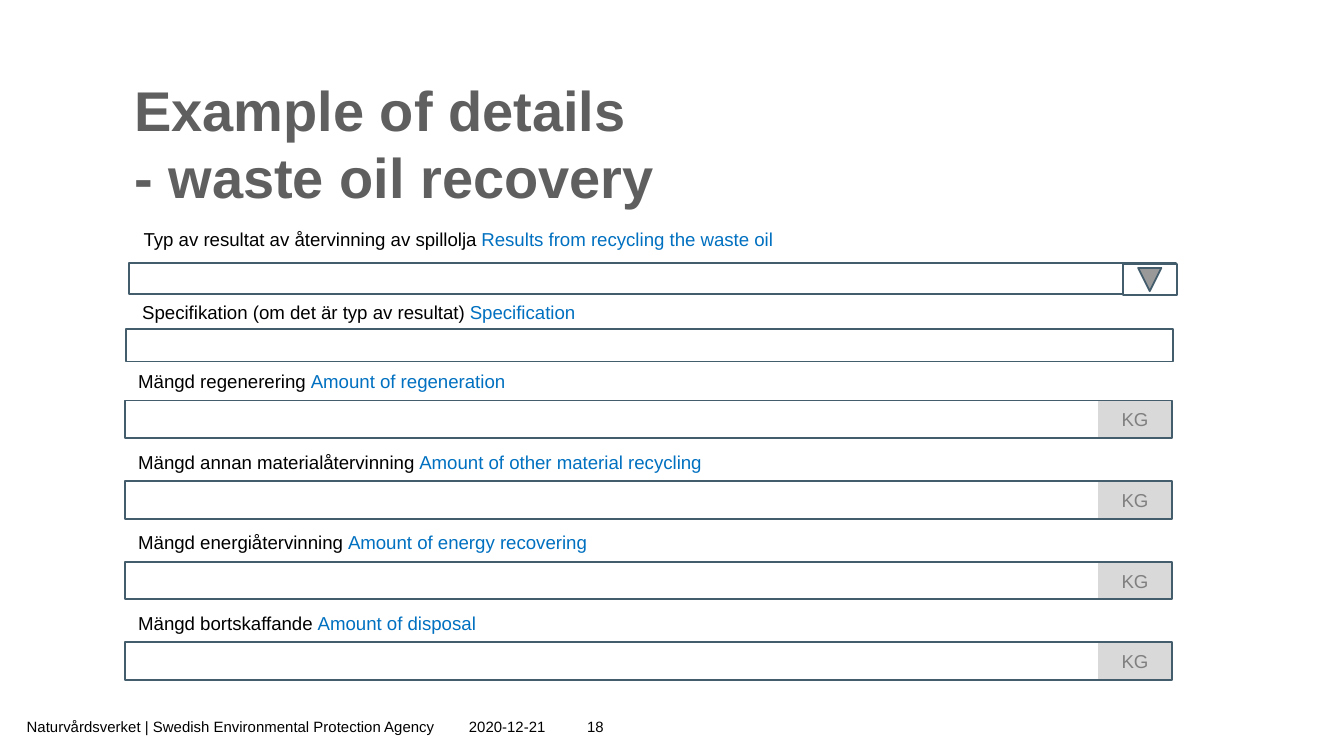
"""Builds a slide with an example form for reporting waste oil recovery."""
from copy import deepcopy

from pptx import Presentation
from pptx.dml.color import RGBColor
from pptx.enum.shapes import MSO_SHAPE
from pptx.enum.text import MSO_ANCHOR, MSO_AUTO_SIZE, PP_ALIGN
from pptx.oxml.ns import qn
from pptx.util import Inches, Pt

COLORS = {
    "text": "000000",
    "english": "0070C0",
    "title": "5F5F5F",
    "border": "435D6C",
    "field": "FFFFFF",
    "unit": "D9D9D9",
    "unit_text": "808080",
}


def write(s, text, english="", size=10, color="text", bold=False,
          align=PP_ALIGN.LEFT, anchor=MSO_ANCHOR.MIDDLE):
    tf = s.text_frame
    tf.word_wrap = True
    tf.auto_size = MSO_AUTO_SIZE.NONE
    tf.vertical_anchor = anchor
    p = tf.paragraphs[0]
    p.text = text
    p.alignment = align
    if english:
        p.add_run().text = english
    for r in p.runs:
        r.font.name = "Arial"
        r.font.size = Pt(size)
        r.font.bold = bold
        name = "english" if r.text == english else color
        r.font.color.rgb = RGBColor.from_string(COLORS[name])
    for br in p._p.findall(qn("a:br")):
        br.append(deepcopy(p.runs[0]._r.rPr))


def add_box(x, y, w, h, fill=None, border=False, kind=MSO_SHAPE.RECTANGLE):
    s = slide.shapes.add_shape(kind, Inches(x), Inches(y), Inches(w), Inches(h))
    s.shadow.inherit = False
    if fill:
        s.fill.solid()
        s.fill.fore_color.rgb = RGBColor.from_string(COLORS[fill])
    else:
        s.fill.background()
    if border:
        s.line.color.rgb = RGBColor.from_string(COLORS["border"])
        s.line.width = Pt(1)
    else:
        s.line.fill.background()
    return s


prs = Presentation()
prs.slide_width = Inches(10)
prs.slide_height = Inches(10) * 9 // 16
slide = prs.slides.add_slide(prs.slide_layouts[5])

title = slide.shapes.title
title.left, title.top = Inches(0.9), Inches(0.51)
title.width, title.height = Inches(6.85), Inches(1.06)
write(title, "Example of details \v- waste oil recovery", size=30,
      color="title", bold=True, anchor=MSO_ANCHOR.TOP)

footer = [
    (0.1, 3.32, "Naturvårdsverket | Swedish Environmental Protection Agency", PP_ALIGN.LEFT),
    (3.39, 0.82, "2020-12-21", PP_ALIGN.LEFT),
    (4.2, 0.39, "18", PP_ALIGN.RIGHT),
]
for x, w, text, align in footer:
    s = slide.shapes.add_textbox(Inches(x), Inches(5.3), Inches(w), Inches(0.21))
    write(s, text, size=8, align=align)

amounts = [
    ("Mängd regenerering ", "Amount of regeneration"),
    ("Mängd annan materialåtervinning ", "Amount of other material recycling"),
    ("Mängd energiåtervinning ", "Amount of energy recovering"),
    ("Mängd bortskaffande ", "Amount of disposal"),
]
for i, (swedish, english) in enumerate(amounts):
    y = 2.98 + 0.6 * i
    unit = add_box(8.17, y, 0.55, 0.28, fill="unit")
    write(unit, "KG", color="unit_text", align=PP_ALIGN.CENTER)
    add_box(0.93, y, 7.79, 0.28, border=True)
    write(add_box(0.93, y - 0.26, 5.11, 0.23, fill="field"), swedish, english)

add_box(0.94, 2.45, 7.79, 0.24, fill="field", border=True)
write(add_box(0.96, 2.21, 5.11, 0.23, fill="field"),
      "Specifikation (om det är typ av resultat) ", "Specification")

add_box(0.96, 1.96, 7.79, 0.23, fill="field", border=True)
arrow = add_box(8.44, 1.88, 0.23, 0.4, fill="field", border=True,
                kind=MSO_SHAPE.ACTION_BUTTON_BACK_OR_PREVIOUS)
arrow.rotation = 270
write(add_box(0.97, 1.63, 6.24, 0.3, fill="field"),
      "Typ av resultat av återvinning av spillolja ",
      "Results from recycling the waste oil")

prs.save("out.pptx")
